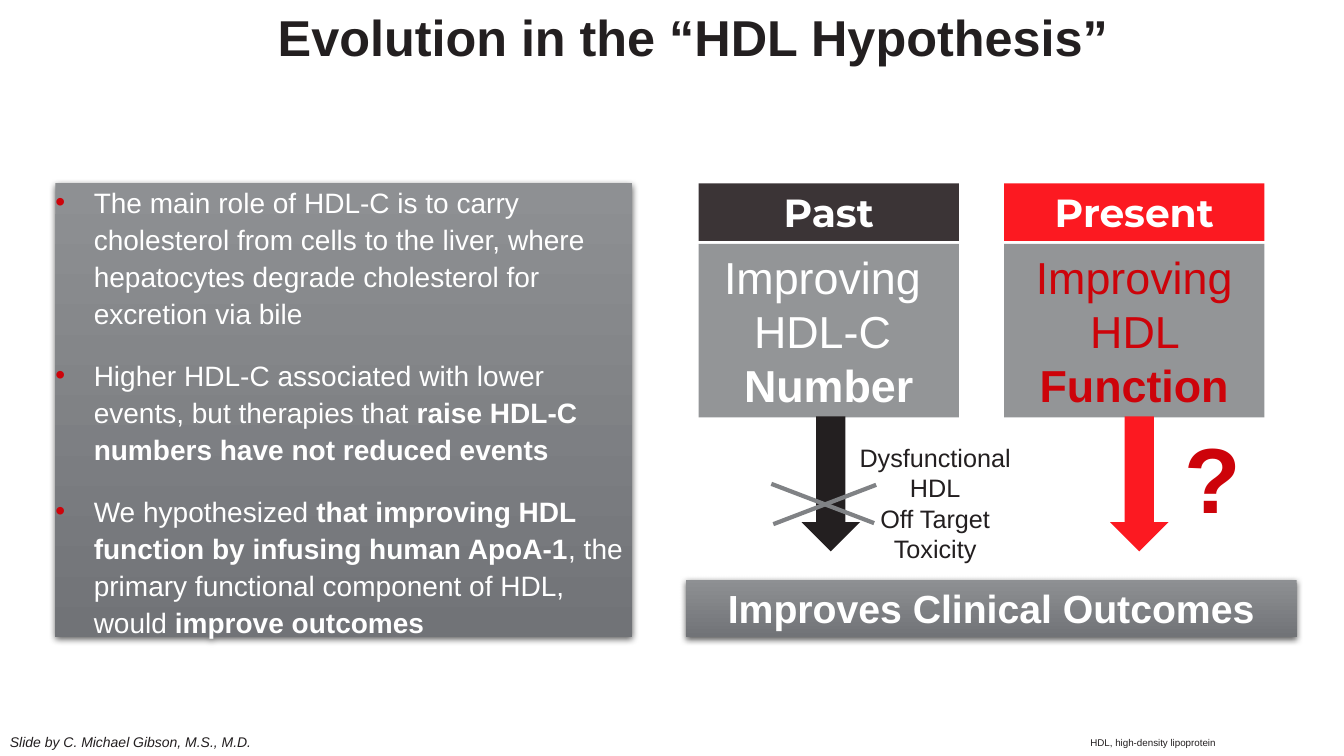
from dataclasses import dataclass, field

import pptx
import pptx.dml.color
import pptx.enum.shapes
import pptx.enum.text
import pptx.oxml
import pptx.oxml.ns
import pptx.util

Inches = pptx.util.Inches
Pt = pptx.util.Pt
SHAPE = pptx.enum.shapes.MSO_SHAPE
ALIGN = pptx.enum.text.PP_ALIGN
ANCHOR = pptx.enum.text.MSO_ANCHOR
NS = pptx.oxml.ns.nsdecls("a")

# Palette
INK, WHITE, RED, BRIGHT_RED = "231F20", "FFFFFF", "CD030A", "FC1921"
CHARCOAL, PANEL_GRAY, CROSS_GRAY = "3B3436", "939597", "808285"
GRADIENT = ("8E9093", "717377")


@dataclass
class Para:
    runs: list  # (text, bold) pairs
    fmt: dict = field(default_factory=dict)
    bullet: bool = False


@dataclass
class Box:
    at: tuple
    paras: list = field(default_factory=list)
    size: float = 18
    color: str = INK
    name: str = "Arial"
    italic: bool = False
    align: ALIGN = ALIGN.CENTER
    fill: str | tuple | None = None
    shape: SHAPE | None = None
    frame: dict = field(default_factory=dict)


def rgb(hex_color: str) -> pptx.dml.color.RGBColor:
    return pptx.dml.color.RGBColor.from_string(hex_color)


def set_all(obj: object, values: dict) -> None:
    for key, value in values.items():
        setattr(obj, key, value)


def add_soft_shadow(sp) -> None:
    sp.shadow.inherit = False
    effects = sp._element.spPr.find(pptx.oxml.ns.qn("a:effectLst"))
    effects.append(pptx.oxml.parse_xml(
        f'<a:outerShdw {NS} blurRad="{Pt(4.5)}" dist="{Pt(1.5)}" dir="5400000" '
        'rotWithShape="0"><a:srgbClr val="000000"><a:alpha val="63000"/>'
        '</a:srgbClr></a:outerShdw>'))


def paint(sp, fill: str | tuple) -> None:
    sp.line.fill.background()
    if isinstance(fill, tuple):
        sp.fill.gradient()
        sp.fill.gradient_angle = 270
        for stop, color in zip(sp.fill.gradient_stops, fill):
            stop.color.rgb = rgb(color)
        add_soft_shadow(sp)
    else:
        sp.fill.solid()
        sp.fill.fore_color.rgb = rgb(fill)
        sp.shadow.inherit = False


def add_bullet(p) -> None:
    pPr = p._p.get_or_add_pPr()
    pPr.set("marL", str(Inches(0.38)))
    pPr.set("indent", str(Inches(-0.38)))
    for xml in (f'<a:buClr {NS}><a:srgbClr val="{RED}"/></a:buClr>',
                f'<a:buFont {NS} typeface="Arial"/>',
                f'<a:buChar {NS} char="•"/>'):
        pPr.append(pptx.oxml.parse_xml(xml))


def add_box(s, box: Box) -> None:
    at = [Inches(v) for v in box.at]
    if box.shape is None:
        sp = s.shapes.add_textbox(*at)
    else:
        sp = s.shapes.add_shape(box.shape, *at)
        paint(sp, box.fill)
    tf = sp.text_frame
    set_all(tf, {"word_wrap": True, **box.frame})
    for i, para in enumerate(box.paras):
        p = tf.add_paragraph() if i else tf.paragraphs[0]
        if para.bullet:
            add_bullet(p)
        set_all(p, {"alignment": box.align, **para.fmt})
        if i == 0:
            p.space_before = Pt(0)
        for text, bold in para.runs:
            r = p.add_run()
            r.text = text
            set_all(r.font, {"name": box.name, "size": Pt(box.size),
                             "bold": bold, "italic": box.italic})
            r.font.color.rgb = rgb(box.color)


def add_stroke(s, start: tuple, end: tuple) -> None:
    line = s.shapes.add_connector(pptx.enum.shapes.MSO_CONNECTOR.STRAIGHT,
                                  *[Inches(v) for v in start + end])
    line.line.color.rgb = rgb(CROSS_GRAY)
    line.line.width = Pt(3)
    line._element.spPr.append(pptx.oxml.parse_xml(f"<a:effectLst {NS}/>"))


def lines(*texts: str, bold: bool = False) -> list:
    return [Para([(text, bold)]) for text in texts]


NO_INSET = {f"margin_{side}": 0 for side in ("left", "top", "right", "bottom")}
POINT_FMT = {"line_spacing": 1.1, "space_before": Pt(12), "space_after": Pt(6)}

POINTS = [
    [("The main role of HDL-C is to carry cholesterol from cells to the liver, "
      "where hepatocytes degrade cholesterol for excretion via bile", False)],
    [("Higher HDL-C associated with lower events, but therapies that ", False),
     ("raise HDL-C numbers have not reduced events", True)],
    [("We hypothesized ", False),
     ("that improving HDL function by infusing human ApoA-1", True),
     (", the primary functional component of HDL, would ", False),
     ("improve outcomes", True)],
]

# Era columns: left, heading, heading fill, goal, key word, text, arrow left and fill
ERAS = [
    (6.93, "Past", CHARCOAL, ("Improving ", "HDL-C "), "Number", WHITE, 7.95, INK),
    (9.96, "Present", BRIGHT_RED, ("Improving", " HDL "), "Function", RED, 11.01,
     BRIGHT_RED),
]


def main() -> None:
    prs = pptx.Presentation()
    prs.slide_width, prs.slide_height = Inches(13.33), Inches(7.5)
    s = prs.slides.add_slide(prs.slide_layouts[6])

    # Title and main points
    add_box(s, Box((2.22, 0.13, 9.31, 0.55),
                   [Para([("Evolution in the “HDL Hypothesis”", True)],
                         {"line_spacing": 0.9})], 36, frame=NO_INSET))
    add_box(s, Box((0.55, 1.82, 5.72, 4.5),
                   [Para(runs, POINT_FMT, bullet=True) for runs in POINTS],
                   20, WHITE, align=ALIGN.LEFT, fill=GRADIENT, shape=SHAPE.RECTANGLE,
                   frame={**NO_INSET, "vertical_anchor": ANCHOR.MIDDLE}))

    # Past and present columns with their arrows
    for left, era, head_fill, goal, key, color, arrow_left, arrow_fill in ERAS:
        add_box(s, Box((left, 2.42, 2.58, 1.72),
                       lines(*goal) + lines(key, bold=True), 32, color,
                       fill=PANEL_GRAY, shape=SHAPE.RECTANGLE))
        add_box(s, Box((left, 1.82, 2.58, 0.57), lines(era, bold=True), 28, WHITE,
                       "Montserrat", fill=head_fill, shape=SHAPE.RECTANGLE))
        add_box(s, Box((arrow_left, 4.13, 0.58, 1.34), fill=arrow_fill,
                       shape=SHAPE.DOWN_ARROW))

    # Cross over the past arrow
    add_stroke(s, (7.67, 5.2), (8.69, 4.81))
    add_stroke(s, (7.65, 4.8), (8.67, 5.19))

    # Arrow labels and outcome bar
    add_box(s, Box((8.42, 4.34, 1.71, 1.31),
                   lines("Dysfunctional HDL", "Off Target Toxicity")))
    add_box(s, Box((11.65, 4.13, 0.77, 1.21), lines("?", bold=True), 66, RED,
                   align=ALIGN.LEFT, frame={"word_wrap": False}))
    add_box(s, Box((6.8, 5.75, 6.06, 0.57),
                   lines("Improves Clinical Outcomes", bold=True), 28, WHITE,
                   fill=GRADIENT, shape=SHAPE.RECTANGLE))

    # Footer
    add_box(s, Box((0, 7.23, 2.62, 0.27),
                   lines("Slide by C. Michael Gibson, M.S., M.D."), 10, italic=True,
                   align=ALIGN.LEFT, frame={"word_wrap": False}))
    add_box(s, Box((10.39, 6.95, 2.09, 0.48),
                   [Para([("HDL, high-density lipoprotein", False)],
                         {"space_after": Pt(3)})], 7,
                   frame={**NO_INSET, "vertical_anchor": ANCHOR.BOTTOM}))

    prs.save("out.pptx")


if __name__ == "__main__":
    main()
